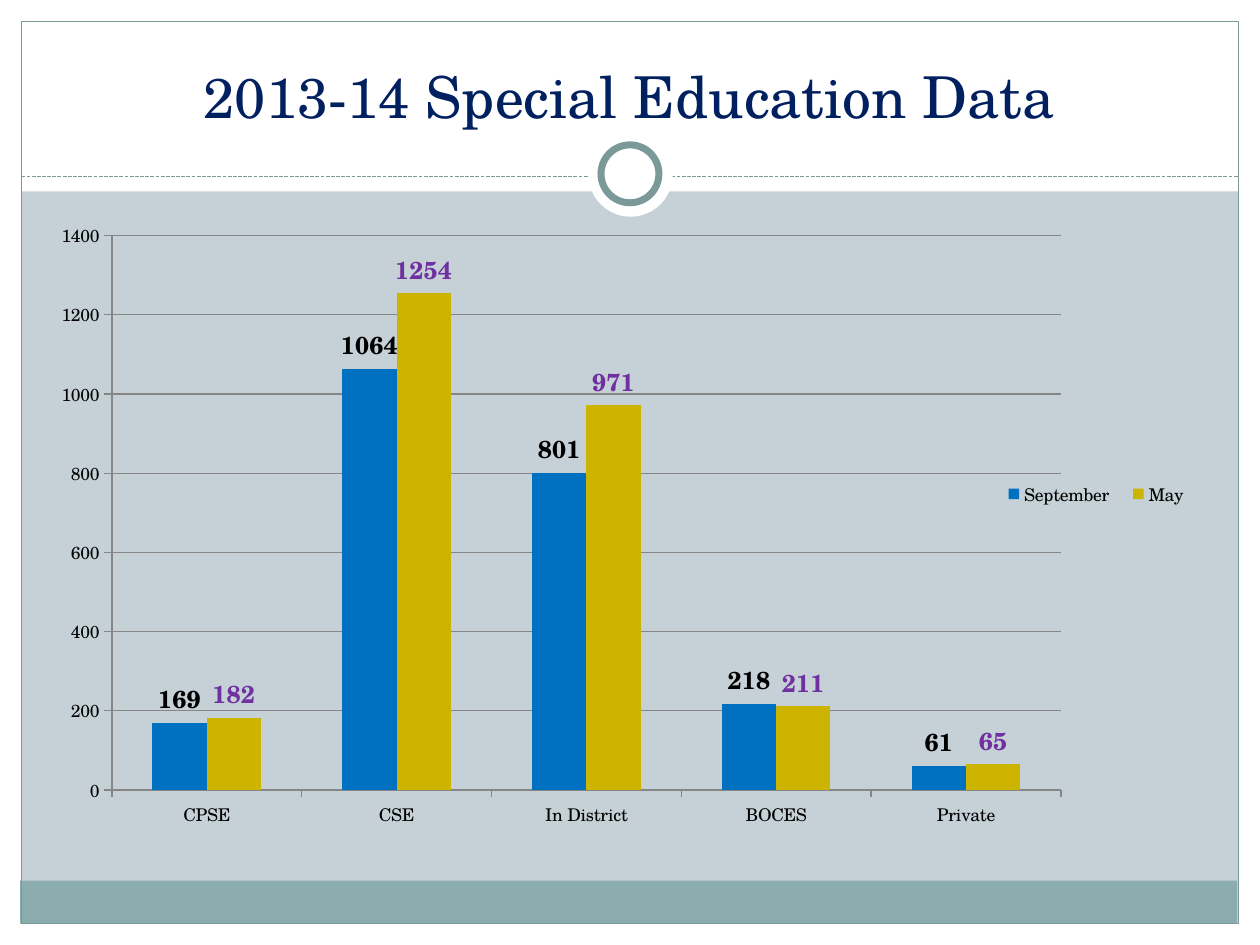
from lxml import etree
from pptx import Presentation
from pptx.chart.data import CategoryChartData
from pptx.dml.color import RGBColor
from pptx.enum.chart import XL_CHART_TYPE as ChartType, XL_LABEL_POSITION as LabelPosition
from pptx.enum.chart import XL_LEGEND_POSITION as LegendPosition, XL_TICK_MARK as TickMark
from pptx.enum.dml import MSO_LINE as Dash
from pptx.enum.shapes import MSO_CONNECTOR as Connector, MSO_SHAPE as Shape
from pptx.enum.text import MSO_ANCHOR as Anchor, PP_ALIGN as Align
from pptx.oxml.ns import qn
from pptx.util import Inches, Pt

WHITE = RGBColor(0xFF, 0xFF, 0xFF)
BLACK = RGBColor(0x00, 0x00, 0x00)
BACKGROUND = RGBColor(0xC5, 0xD1, 0xD7)
BAND = RGBColor(0x8C, 0xAD, 0xAE)
FRAME = RGBColor(0x7C, 0x99, 0x9A)
NAVY = RGBColor(0x00, 0x20, 0x60)
BLUE = RGBColor(0x00, 0x70, 0xC0)
GOLD = RGBColor(0xCC, 0xB4, 0x00)
PURPLE = RGBColor(0x70, 0x30, 0xA0)
GRAY = RGBColor(0x86, 0x86, 0x86)
FONT = "TeX Gyre Schola"


def format_font(font, size, color=BLACK, bold=False):
    font.name, font.size, font.bold = FONT, Pt(size), bold
    font.color.rgb = color


def add_run(paragraph, text, **style):
    run = paragraph.add_run()
    run.text = text
    format_font(run.font, **style)


def set_layout(parent, index, inner=False, **fractions):
    """Place a chart part by fractions of the chart's size."""
    for old in parent.findall(qn("c:layout")):
        parent.remove(old)
    layout = etree.Element(qn("c:layout"))
    manual = etree.SubElement(layout, qn("c:manualLayout"))
    settings = {"layoutTarget": "inner"} if inner else {}
    settings |= {"xMode": "edge", "yMode": "edge", **fractions}
    for name, value in settings.items():
        etree.SubElement(manual, qn(f"c:{name}")).set("val", str(value))
    parent.insert(index, layout)


class SlideBuilder:
    def __init__(self, slide):
        self.slide = slide
        slide.background.fill.solid()
        slide.background.fill.fore_color.rgb = BACKGROUND

    def shape(self, kind, *box, fill=None, line=None, width=0.75):
        shape = self.slide.shapes.add_shape(kind, *map(Inches, box))
        shape.shadow.inherit = False
        if fill is None:
            shape.fill.background()
        else:
            shape.fill.solid()
            shape.fill.fore_color.rgb = fill
        if line is None:
            shape.line.fill.background()
        else:
            shape.line.color.rgb = line
            shape.line.width = Pt(width)

    def dashed_line(self, *ends):
        line = self.slide.shapes.add_connector(Connector.STRAIGHT, *map(Inches, ends))
        line.line.color.rgb = FRAME
        line.line.width = Pt(0.75)
        line.line.dash_style = Dash.SQUARE_DOT
        etree.SubElement(line.element.spPr, qn("a:effectLst"))

    def title(self, runs, *box):
        frame = self.slide.shapes.add_textbox(*map(Inches, box)).text_frame
        frame.word_wrap = True
        frame.vertical_anchor = Anchor.BOTTOM
        paragraph = frame.paragraphs[0]
        paragraph.alignment = Align.CENTER
        for text, size in runs:
            add_run(paragraph, text, size=size, color=NAVY)

    def column_chart(self, categories, series, *box):
        data = CategoryChartData()
        data.categories = categories
        for name, values, _, _ in series:
            data.add_series(name, values)
        chart = self.slide.shapes.add_chart(
            ChartType.COLUMN_CLUSTERED, *map(Inches, box), data).chart
        format_font(chart.font, 10)
        chart.has_title = False

        # Columns and their labels
        plot = chart.plots[0]
        plot.gap_width, plot.overlap, plot.vary_by_categories = 150, 0, False
        for column, (_, _, fill, label_color) in zip(plot.series, series):
            column.format.fill.solid()
            column.format.fill.fore_color.rgb = fill
            labels = column.data_labels
            labels.show_value = True
            labels.position = LabelPosition.OUTSIDE_END
            format_font(labels.font, 14, label_color, bold=True)

        # Axes
        value_axis = chart.value_axis
        value_axis.minimum_scale, value_axis.maximum_scale = 0, 1400
        value_axis.major_unit = 200
        value_axis.has_major_gridlines = True
        for axis in (chart.category_axis, value_axis):
            axis.major_tick_mark = TickMark.OUTSIDE
            axis.format.line.color.rgb = GRAY
        value_axis.major_gridlines.format.line.color.rgb = GRAY

        # Legend and placement
        chart.has_legend = True
        chart.legend.position = LegendPosition.RIGHT
        chart.legend.include_in_layout = False
        plot_area = chart.element.find(".//" + qn("c:plotArea"))
        legend = chart.element.find(".//" + qn("c:legend"))
        set_layout(plot_area, 0, inner=True, x=0.06, y=0.04, w=0.81, h=0.88)
        set_layout(legend, 1, x=0.81, y=0.42, w=0.18, h=0.06)


def main():
    presentation = Presentation()
    presentation.slide_width, presentation.slide_height = Inches(10), Inches(7.5)
    builder = SlideBuilder(presentation.slides.add_slide(presentation.slide_layouts[6]))

    # White margins and header
    for box in ((0, 7.33, 10, 0.17), (0, 0, 10, 1.52),
                (0, 0, 0.17, 7.5), (9.83, 0, 0.17, 7.5)):
        builder.shape(Shape.RECTANGLE, *box, fill=WHITE)

    # Footer band, frame and divider with ring
    builder.shape(Shape.RECTANGLE, 0.16, 6.99, 9.66, 0.34, fill=BAND)
    builder.shape(Shape.RECTANGLE, 0.17, 0.17, 9.66, 7.16, line=FRAME)
    builder.dashed_line(0.17, 1.4, 9.83, 1.4)
    builder.shape(Shape.OVAL, 4.67, 1.05, 0.67, 0.67, fill=WHITE)
    builder.shape(Shape.OVAL, 4.77, 1.15, 0.46, 0.46, fill=WHITE, line=FRAME, width=4)

    # Title and chart
    builder.title([("2013-14", 32), (" Special Education Data", 33)],
                  0.33, 0.25, 9.33, 0.83)
    builder.column_chart(
        ["CPSE", "CSE", "In District", "BOCES", "Private"],
        [("September", (169, 1064, 801, 218, 61), BLUE, BLACK),
         ("May", (182, 1254, 971, 211, 65), GOLD, PURPLE)],
        0.33, 1.67, 9.3, 5)

    presentation.save("out.pptx")


if __name__ == "__main__":
    main()
